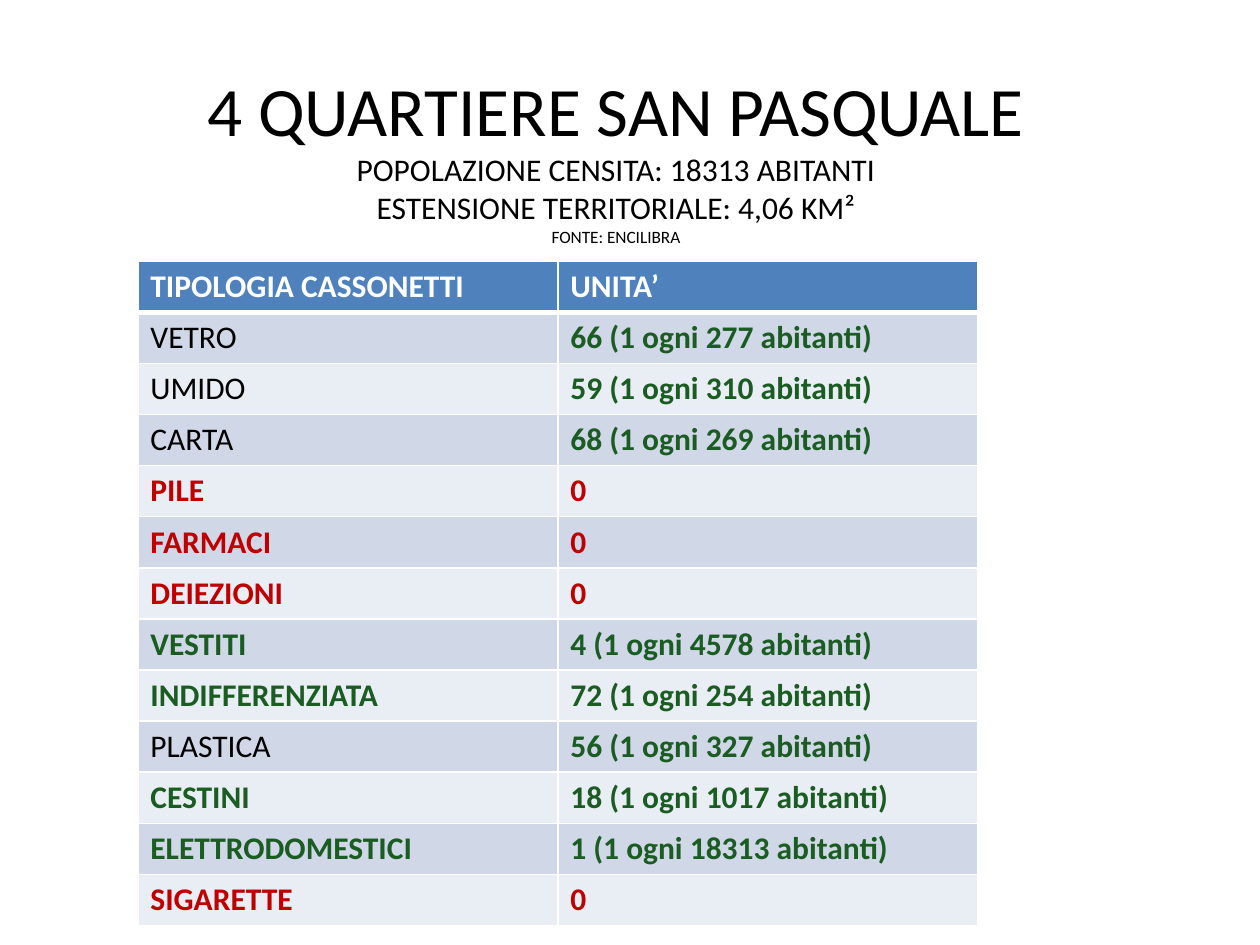
"""Build the San Pasquale district slide: census heading and waste container table."""
from lxml import etree
from pptx import Presentation
from pptx import util as u
from pptx.dml.color import RGBColor
from pptx.enum import text
from pptx.oxml import ns

BLACK = RGBColor(0x00, 0x00, 0x00)
WHITE = RGBColor(0xFF, 0xFF, 0xFF)
GREEN = RGBColor(0x1A, 0x5C, 0x22)
RED = RGBColor(0xC0, 0x00, 0x00)
HEADER = RGBColor(0x4F, 0x81, 0xBD)
BANDS = (RGBColor(0xD0, 0xD8, 0xE8), RGBColor(0xE9, 0xED, 0xF4))

HEADING = (
    ("4 QUARTIERE SAN PASQUALE", 39.6),
    ("POPOLAZIONE CENSITA: 18313 ABITANTI", 18),
    ("ESTENSIONE TERRITORIALE: 4,06 KM²", 18),
    ("FONTE: ENCILIBRA", 9.9),
)
COLUMNS = ("TIPOLOGIA CASSONETTI", "UNITA’")
CONTAINERS = (
    ("VETRO", BLACK, "66 (1 ogni 277 abitanti)"),
    ("UMIDO", BLACK, "59 (1 ogni 310 abitanti)"),
    ("CARTA", BLACK, "68 (1 ogni 269 abitanti)"),
    ("PILE", RED, "0"),
    ("FARMACI", RED, "0"),
    ("DEIEZIONI", RED, "0"),
    ("VESTITI", GREEN, "4 (1 ogni 4578 abitanti)"),
    ("INDIFFERENZIATA", GREEN, "72 (1 ogni 254 abitanti)"),
    ("PLASTICA", BLACK, "56 (1 ogni 327 abitanti)"),
    ("CESTINI", GREEN, "18 (1 ogni 1017 abitanti)"),
    ("ELETTRODOMESTICI", GREEN, "1 (1 ogni 18313 abitanti)"),
    ("SIGARETTE", RED, "0"),
)


class SlideBuilder:
    def __init__(self, slide, typeface="Calibri", table_size=18):
        self.slide = slide
        self.typeface = typeface
        self.table_size = table_size

    def label(self, paragraph, wording, size, color, bold=False):
        paragraph.text = wording
        font = paragraph.font
        font.name, font.size, font.bold = self.typeface, u.Pt(size), bold
        font.color.rgb = color

    def heading(self, lines, left, top, width, height):
        box = self.slide.shapes.add_textbox(*map(u.Pt, (left, top, width, height)))
        frame = box.text_frame
        frame.word_wrap = True
        frame.vertical_anchor = text.MSO_ANCHOR.MIDDLE
        for index, (wording, size) in enumerate(lines):
            paragraph = frame.paragraphs[0] if index == 0 else frame.add_paragraph()
            paragraph.alignment = text.PP_ALIGN.CENTER
            self.label(paragraph, wording, size, BLACK)

    def borders(self, cell, top, bottom):
        properties = cell._tc.get_or_add_tcPr()
        for side, width in (("L", 1), ("R", 1), ("T", top), ("B", bottom)):
            line = etree.SubElement(properties, ns.qn(f"a:ln{side}"), w=str(u.Pt(width)))
            fill = etree.SubElement(line, ns.qn("a:solidFill"))
            etree.SubElement(fill, ns.qn("a:srgbClr"), val=str(WHITE))

    def cell(self, cell, wording, color, fill, bold, top=1, bottom=1):
        self.borders(cell, top, bottom)
        cell.fill.solid()
        cell.fill.fore_color.rgb = fill
        self.label(cell.text_frame.paragraphs[0], wording, self.table_size, color, bold)

    def table(self, columns, containers, left, top, column_width, row_height):
        row_count = len(containers) + 1
        size = column_width * len(columns), row_height * row_count
        table = self.slide.shapes.add_table(
            row_count, len(columns), *map(u.Pt, (left, top, *size))
        ).table
        for row in table.rows:
            row.height = u.Pt(row_height)
        for column, title in enumerate(columns):
            self.cell(table.cell(0, column), title, WHITE, HEADER, True, bottom=3)
        for row, (kind, color, units) in enumerate(containers, 1):
            band = BANDS[(row - 1) % 2]
            edge = 3 if row == 1 else 1
            units_color = RED if units == "0" else GREEN
            self.cell(table.cell(row, 0), kind, color, band, color != BLACK, top=edge)
            self.cell(table.cell(row, 1), units, units_color, band, True, top=edge)


def main():
    deck = Presentation()
    deck.slide_width, deck.slide_height = u.Pt(720), u.Pt(540)
    builder = SlideBuilder(deck.slides.add_slide(deck.slide_layouts[6]))
    builder.heading(HEADING, left=28, top=44.6, width=648, height=90)
    builder.table(COLUMNS, CONTAINERS, left=78.75, top=149.3, column_width=240, row_height=29.2)
    deck.save("out.pptx")


if __name__ == "__main__":
    main()
